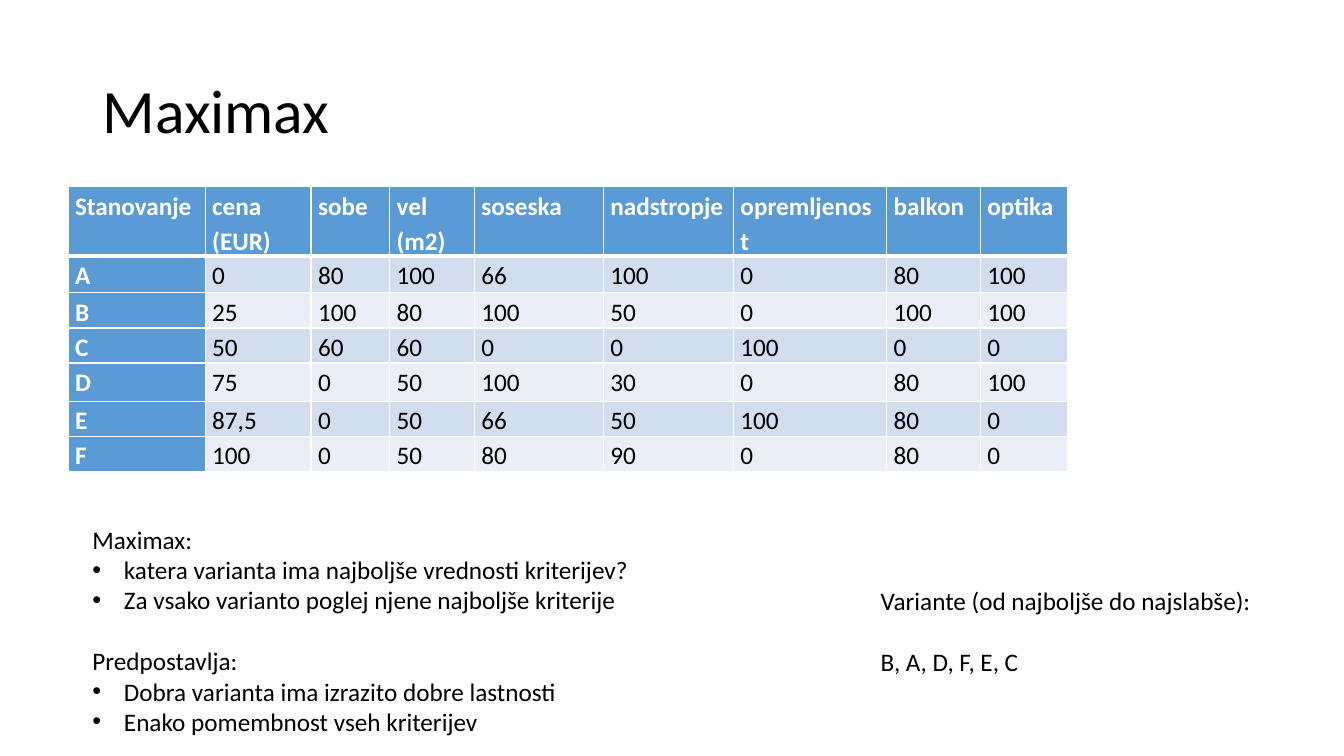
import pptx
import pptx.dml.color
import pptx.enum.text
import pptx.oxml
import pptx.oxml.ns
import pptx.util

Pt = pptx.util.Pt
RGB = pptx.dml.color.RGBColor
ALIGN = pptx.enum.text.PP_ALIGN
ANCHOR = pptx.enum.text.MSO_ANCHOR
SIZING = pptx.enum.text.MSO_AUTO_SIZE

BLACK = RGB(0x00, 0x00, 0x00)
WHITE = RGB(0xFF, 0xFF, 0xFF)
BLUE = RGB(0x5B, 0x9B, 0xD5)
BANDS = RGB(0xD2, 0xDE, 0xEF), RGB(0xEA, 0xEF, 0xF7)

HEADS = ["Stanovanje", "cena (EUR)", "sobe", "vel (m2)", "soseska",
         "nadstropje", "opremljenost", "balkon", "optika"]
FLATS = [
    ["A", "0", "80", "100", "66", "100", "0", "80", "100"],
    ["B", "25", "100", "80", "100", "50", "0", "100", "100"],
    ["C", "50", "60", "60", "0", "0", "100", "0", "0"],
    ["D", "75", "0", "50", "100", "30", "0", "80", "100"],
    ["E", "87,5", "0", "50", "66", "50", "100", "80", "0"],
    ["F", "100", "0", "50", "80", "90", "0", "80", "0"],
]
WIDTHS = [98, 75.6, 56.2, 60.5, 92.2, 92.9, 109.4, 67, 62.6]
HEIGHTS = [49.2, 26, 25.2, 25, 27.4, 25, 25]
GAP = 22  # one line of 18 pt text


class Page:
    def __init__(self, deck, font="Calibri", size=18):
        self.slide = deck.slides.add_slide(deck.slide_layouts[5])
        self.font, self.size = font, size

    def run(self, par, text, size=None, color=BLACK, bold=False):
        run = par.add_run()
        run.text = text
        run.font.name = self.font
        run.font.size = Pt(size or self.size)
        run.font.color.rgb = color
        run.font.bold = bold

    def title(self, text, box):
        shape = self.slide.shapes.title
        shape.left, shape.top, shape.width, shape.height = map(Pt, box)
        frame = shape.text_frame
        frame.vertical_anchor = ANCHOR.MIDDLE
        par = frame.paragraphs[0]
        par.alignment = ALIGN.LEFT
        par.line_spacing = 0.9
        self.run(par, text, 44)

    def bullet(self, par):
        props = par._p.get_or_add_pPr()
        props.set("marL", str(Pt(22.5)))
        props.set("indent", str(-Pt(22.5)))
        for tag, key, value in (("buFont", "typeface", "Arial"),
                                ("buChar", "char", "•")):
            mark = pptx.oxml.parse_xml(
                f'<a:{tag} {pptx.oxml.ns.nsdecls("a")} {key}="{value}"/>')
            props.append(mark)

    def text(self, box, lines):
        """Each line is (text, has bullet, space before)."""
        frame = self.slide.shapes.add_textbox(*map(Pt, box)).text_frame
        frame.word_wrap = False
        frame.auto_size = SIZING.SHAPE_TO_FIT_TEXT
        for i, (line, dot, gap) in enumerate(lines):
            par = frame.add_paragraph() if i else frame.paragraphs[0]
            if gap:
                par.space_before = Pt(gap)
            if dot:
                self.bullet(par)
            self.run(par, line)

    def border(self, cell, side, width):
        line = pptx.oxml.parse_xml(
            f'<a:ln{side} {pptx.oxml.ns.nsdecls("a")} w="{Pt(width)}">'
            f'<a:solidFill><a:srgbClr val="{WHITE}"/></a:solidFill></a:ln{side}>')
        cell._tc.get_or_add_tcPr().append(line)

    def cell(self, cell, text, row, col):
        head = row == 0 or col == 0
        cell.margin_left = cell.margin_right = Pt(5)
        cell.margin_top = cell.margin_bottom = 0
        thick = {0: "B", 1: "T"}.get(row)
        for side in "LRTB":
            self.border(cell, side, 3 if side == thick else 1)
        cell.fill.solid()
        cell.fill.fore_color.rgb = BLUE if head else BANDS[(row - 1) % 2]
        par = cell.text_frame.paragraphs[0]
        par.line_spacing = 1.15
        self.run(par, text, color=WHITE if head else BLACK, bold=head)

    def table(self, left, top, rows, widths, heights):
        table = self.slide.shapes.add_table(
            len(rows), len(widths), Pt(left), Pt(top),
            Pt(sum(widths)), Pt(sum(heights))).table
        table.first_col = True
        for col, width in zip(table.columns, widths):
            col.width = Pt(width)
        for row, height in zip(table.rows, heights):
            row.height = Pt(height)
        for r, row in enumerate(rows):
            for c, text in enumerate(row):
                self.cell(table.cell(r, c), text, r, c)


def main():
    deck = pptx.Presentation()
    deck.slide_width, deck.slide_height = Pt(960), Pt(540)
    page = Page(deck)
    page.title("Maximax", (66, 28.8, 828, 104.4))
    page.text((59, 370.8, 405.4, 159.8), [
        ("Maximax:", False, 0),
        ("katera varianta ima najboljše vrednosti kriterijev?", True, 0),
        ("Za vsako varianto poglej njene najboljše kriterije", True, 0),
        ("Predpostavlja:", False, GAP),
        ("Dobra varianta ima izrazito dobre lastnosti", True, 0),
        ("Enako pomembnost vseh kriterijev", True, 0),
    ])
    page.text((622, 414.7, 281.5, 94.3), [
        ("Variante (od najboljše do najslabše):", False, 0),
        ("B, A, D, F, E, C", False, GAP),
    ])
    page.table(48.6, 133.4, [HEADS] + FLATS, WIDTHS, HEIGHTS)
    deck.save("out.pptx")


if __name__ == "__main__":
    main()
